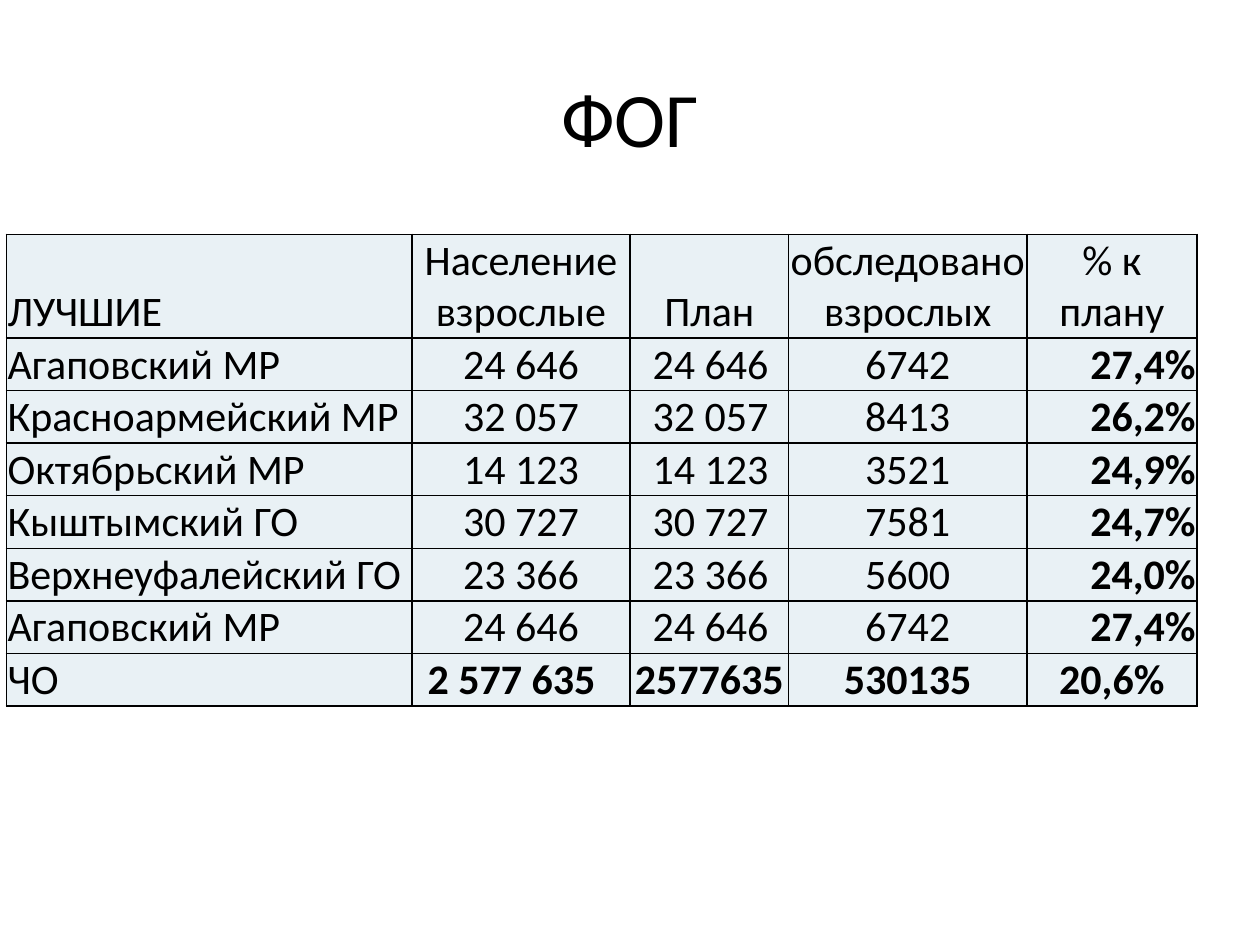
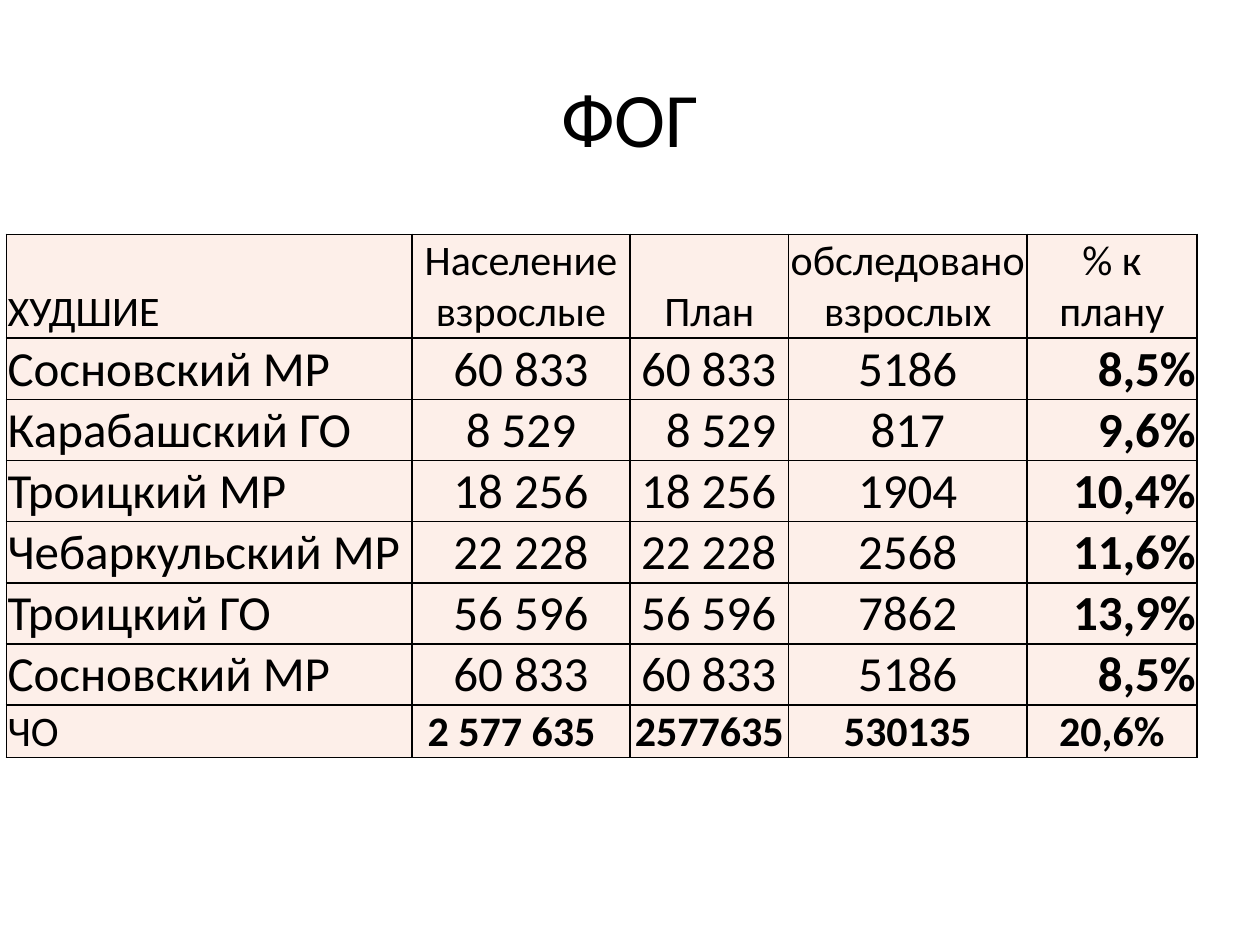
from lxml import etree
from pptx import Presentation
from pptx.dml.color import RGBColor
from pptx.enum.text import MSO_ANCHOR, PP_ALIGN
from pptx.oxml.ns import qn
from pptx.util import Inches, Pt

LEFT, CENTER, RIGHT = PP_ALIGN.LEFT, PP_ALIGN.CENTER, PP_ALIGN.RIGHT
MIDDLE, BOTTOM = MSO_ANCHOR.MIDDLE, MSO_ANCHOR.BOTTOM

FONT = "Calibri"
COLORS = {"text": "000000", "border": "000000", "best": "E9F1F5", "worst": "FDEFE9"}
TITLE_ONLY = 5
TITLE_BOX = (0.5, 0.3, 9, 1.25)
TABLE_BOX = (0.05, 1.86, 9.45)
COLUMN_WIDTHS = (3.22, 1.73, 1.26, 1.89, 1.35)
HEADER_HEIGHT = 0.81
ROW_HEIGHTS = {24: 0.41, 28: 0.48}  # by text size
BASE_SIZE = 24
INSET = 0.01
WIDE_INSET = 0.16

HEADINGS = ("Население взрослые", "План", "обследовано взрослых", "% к плану")
REGION_TOTAL = ("ЧО", "2 577 635", "2577635", "530135", "20,6%")

# District, adult population (also the plan), examined adults, share of plan
BEST_DISTRICTS = (
    ("Агаповский МР", "24 646", "6742", "27,4%"),
    ("Красноармейский МР", "32 057", "8413", "26,2%"),
    ("Октябрьский МР", "14 123", "3521", "24,9%"),
    ("Кыштымский ГО", "30 727", "7581", "24,7%"),
    ("Верхнеуфалейский ГО", "23 366", "5600", "24,0%"),
    ("Агаповский МР", "24 646", "6742", "27,4%"),
)
WORST_DISTRICTS = (
    ("Сосновский МР", "60 833", "5186", "8,5%"),
    ("Карабашский ГО", "8 529", "817", "9,6%"),
    ("Троицкий МР", "18 256", "1904", "10,4%"),
    ("Чебаркульский МР", "22 228", "2568", "11,6%"),
    ("Троицкий ГО", "56 596", "7862", "13,9%"),
    ("Сосновский МР", "60 833", "5186", "8,5%"),
)


def add_run(paragraph, text, size, bold=False):
    run = paragraph.add_run()
    run.text = text
    run.font.name = FONT
    run.font.size = Pt(size)
    run.font.bold = bold
    run.font.color.rgb = RGBColor.from_string(COLORS["text"])


def add_title(slide, text, box):
    title = slide.shapes.title
    title.left, title.top, title.width, title.height = map(Inches, box)
    title.text_frame.vertical_anchor = MIDDLE
    paragraph = title.text_frame.paragraphs[0]
    paragraph.alignment = CENTER
    add_run(paragraph, text, 44)


def add_borders(cell):
    properties = cell._tc.get_or_add_tcPr()
    for side in ("lnL", "lnR", "lnT", "lnB"):
        line = etree.SubElement(properties, qn(f"a:{side}"), w=str(Pt(1)))
        fill = etree.SubElement(line, qn("a:solidFill"))
        etree.SubElement(fill, qn("a:srgbClr"), val=COLORS["border"])


def fill_cell(cell, text, size, fill, alignment, anchor, bold=False, right_inset=INSET):
    add_borders(cell)
    cell.fill.solid()
    cell.fill.fore_color.rgb = RGBColor.from_string(fill)
    cell.margin_left = cell.margin_top = Inches(INSET)
    cell.margin_right = Inches(right_inset)
    cell.margin_bottom = 0
    cell.vertical_anchor = anchor
    paragraph = cell.text_frame.paragraphs[0]
    paragraph.alignment = alignment
    add_run(paragraph, text, size, bold)


def add_district_table(slide, box, heading, districts, fill, size, plan_inset):
    left, top, width = box
    heights = [HEADER_HEIGHT] + [ROW_HEIGHTS[size]] * len(districts) + [ROW_HEIGHTS[BASE_SIZE]]
    frame = slide.shapes.add_table(
        len(heights), len(COLUMN_WIDTHS),
        Inches(left), Inches(top), Inches(width), Inches(sum(heights)))
    table = frame.table
    table.first_row = table.horz_banding = False
    for column, column_width in zip(table.columns, COLUMN_WIDTHS):
        column.width = Inches(column_width)
    for row, height in zip(table.rows, heights):
        row.height = Inches(height)

    # Heading row
    for index, text in enumerate((heading, *HEADINGS)):
        fill_cell(table.cell(0, index), text, BASE_SIZE, fill, CENTER if index else LEFT, BOTTOM)

    # District rows
    for row_index, (name, population, examined, share) in enumerate(districts, 1):
        cells = table.rows[row_index].cells
        fill_cell(cells[0], name, size, fill, LEFT, BOTTOM)
        fill_cell(cells[1], population, size, fill, CENTER, MIDDLE)
        fill_cell(cells[2], population, size, fill, RIGHT, MIDDLE, right_inset=plan_inset)
        fill_cell(cells[3], examined, size, fill, CENTER, MIDDLE)
        fill_cell(cells[4], share, size, fill, RIGHT, MIDDLE, bold=True)

    # Total row
    for index, text in enumerate(REGION_TOTAL):
        cell = table.cell(len(heights) - 1, index)
        if index == 0:
            fill_cell(cell, text, BASE_SIZE, fill, LEFT, BOTTOM)
        else:
            fill_cell(cell, text, BASE_SIZE, fill, CENTER, MIDDLE, bold=True,
                      right_inset=WIDE_INSET if index == 1 else INSET)


def add_ranking_slide(presentation, heading, districts, fill, size, plan_inset):
    slide = presentation.slides.add_slide(presentation.slide_layouts[TITLE_ONLY])
    add_title(slide, "ФОГ", TITLE_BOX)
    add_district_table(slide, TABLE_BOX, heading, districts, fill, size, plan_inset)


def main():
    presentation = Presentation()
    presentation.slide_width, presentation.slide_height = Inches(10), Inches(7.5)
    add_ranking_slide(presentation, "ЛУЧШИЕ", BEST_DISTRICTS, COLORS["best"], 24, WIDE_INSET)
    add_ranking_slide(presentation, "ХУДШИЕ", WORST_DISTRICTS, COLORS["worst"], 28, 0.1)
    presentation.save("out.pptx")


if __name__ == "__main__":
    main()
